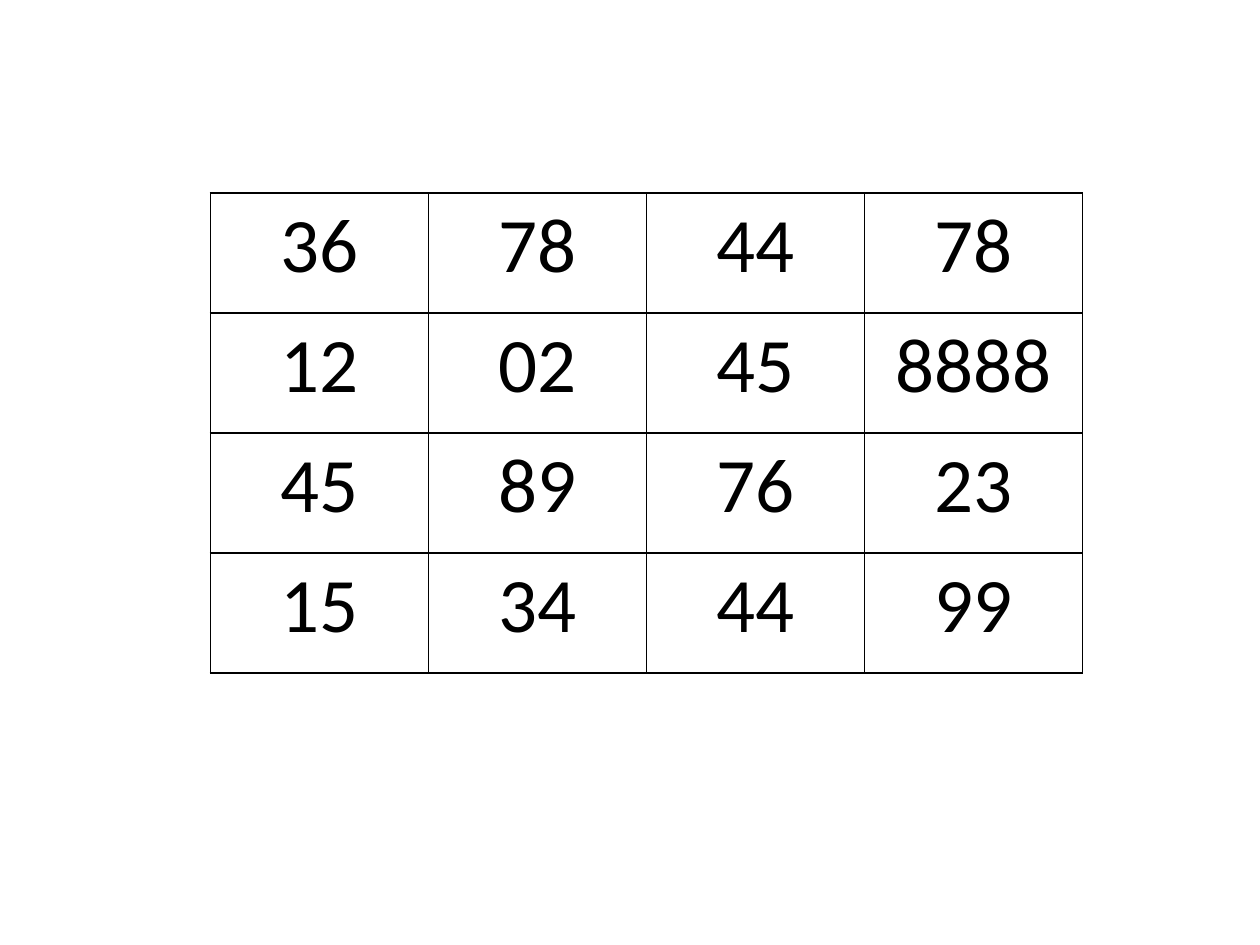
from lxml import etree
from pptx import Presentation
from pptx.dml.color import RGBColor
from pptx.enum.text import PP_ALIGN
from pptx.oxml.ns import qn
from pptx.util import Inches, Pt

CENTER = PP_ALIGN.CENTER
BLACK = RGBColor(0x00, 0x00, 0x00)
BORDER_WIDTH = Pt(1)
BLANK_LAYOUT = 6

NUMBERS = [
    ["36", "78", "44", "78"],
    ["12", "02", "45", "8888"],
    ["45", "89", "76", "23"],
    ["15", "34", "44", "99"],
]


def set_borders(cell):
    tc_pr = cell._tc.get_or_add_tcPr()
    for i, side in enumerate(("lnL", "lnR", "lnT", "lnB")):
        ln = etree.Element(qn(f"a:{side}"), w=str(int(BORDER_WIDTH)))
        fill = etree.SubElement(ln, qn("a:solidFill"))
        etree.SubElement(fill, qn("a:srgbClr"), val=str(BLACK))
        tc_pr.insert(i, ln)


def fill_cell(cell, text):
    cell.fill.background()
    set_borders(cell)
    cell.text = text
    p = cell.text_frame.paragraphs[0]
    p.alignment = CENTER
    p.font.name = "Calibri"
    p.font.size = Pt(44)
    p.font.color.rgb = BLACK


def add_number_table(s, left, top, width, height):
    rows, cols = len(NUMBERS), len(NUMBERS[0])
    table = s.shapes.add_table(rows, cols, left, top, width, height).table
    table.first_row = False
    table.horz_banding = False
    for r, values in enumerate(NUMBERS):
        for c, text in enumerate(values):
            fill_cell(table.cell(r, c), text)


def main():
    prs = Presentation()
    prs.slide_width = Inches(10)
    prs.slide_height = Inches(7.5)
    s = prs.slides.add_slide(prs.slide_layouts[BLANK_LAYOUT])
    add_number_table(s, Inches(1.67), Inches(1.53), Inches(6.92), Inches(3.81))
    prs.save("out.pptx")


if __name__ == "__main__":
    main()
